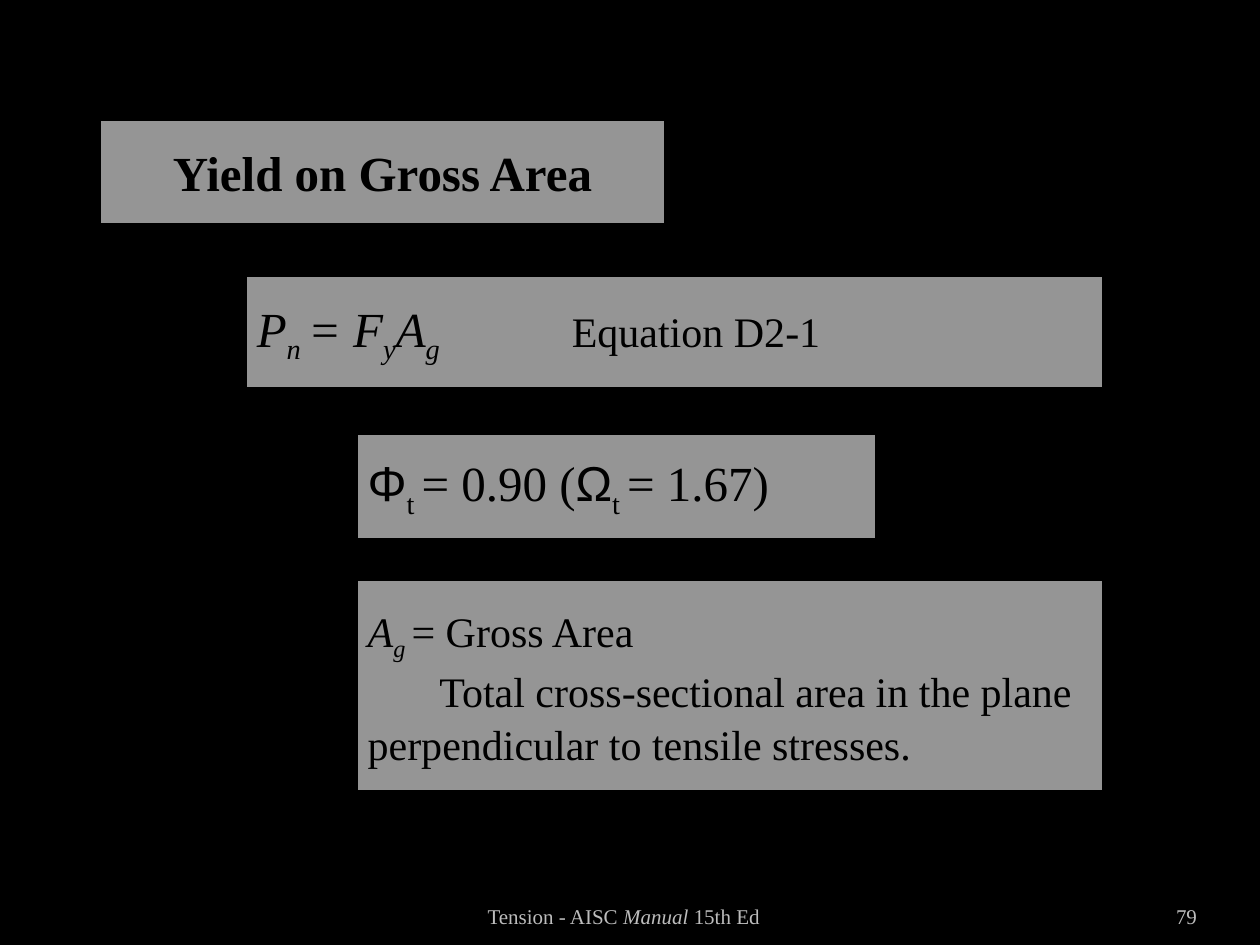
"""Build the slide on yielding of the gross area of a tension member."""
from dataclasses import dataclass
from typing import Optional

from lxml.etree import SubElement
from pptx import Presentation
from pptx.dml.color import RGBColor
from pptx.enum.shapes import MSO_SHAPE
from pptx.enum.text import MSO_ANCHOR as Anchor, PP_ALIGN as Align
from pptx.oxml.ns import qn
from pptx.util import Pt

SERIF, SANS = "Times New Roman", "Arial"
BLACK, PANEL_GREY, FOOTER_GREY = "000000", "F2F2F2", "BCBCBC"


@dataclass
class Piece:
    text: str
    size: float = 28
    italic: bool = False
    bold: bool = False
    subscript: bool = False
    font: str = SERIF


@dataclass
class Box:
    left: float
    top: float
    width: float
    height: float
    lines: list[list[Piece]]
    align: Align = Align.LEFT
    tab: Optional[float] = None
    spacing: Optional[float] = None


def rgb(value: str) -> RGBColor:
    return RGBColor.from_string(value)


def write_lines(text_frame, box: Box, color: str) -> None:
    text_frame.word_wrap = True
    for index, pieces in enumerate(box.lines):
        paragraph = text_frame.add_paragraph() if index else text_frame.paragraphs[0]
        if box.tab is not None:
            properties = paragraph.get_or_add_pPr() if hasattr(paragraph, "get_or_add_pPr") else paragraph._p.get_or_add_pPr()
            tabs = SubElement(properties, qn("a:tabLst"))
            SubElement(tabs, qn("a:tab"), pos=str(Pt(box.tab)), algn="l")
        paragraph.alignment = box.align
        if box.spacing is not None:
            paragraph.line_spacing = box.spacing
        for piece in pieces:
            run = paragraph.add_run()
            run.text = piece.text
            run.font.name = piece.font
            run.font.size = Pt(piece.size)
            run.font.bold = piece.bold
            run.font.italic = piece.italic
            run.font.color.rgb = rgb(color)
            if piece.subscript:
                run.font._element.set("baseline", "-25000")


def add_panel(slide, box: Box) -> None:
    shape = slide.shapes.add_shape(
        MSO_SHAPE.RECTANGLE, Pt(box.left), Pt(box.top), Pt(box.width), Pt(box.height))
    shape.shadow.inherit = False
    shape.fill.solid()
    shape.fill.fore_color.rgb = rgb(PANEL_GREY)
    color = shape._element.spPr.find(qn("a:solidFill")).find(qn("a:srgbClr"))
    SubElement(color, qn("a:alpha"), val="62000")
    shape.line.color.rgb = rgb(BLACK)
    shape.line.width = Pt(3)
    shape.text_frame.vertical_anchor = Anchor.MIDDLE
    write_lines(shape.text_frame, box, BLACK)


def add_footer(slide, box: Box) -> None:
    shape = slide.shapes.add_textbox(
        Pt(box.left), Pt(box.top), Pt(box.width), Pt(box.height))
    text_frame = shape.text_frame
    text_frame.margin_left = text_frame.margin_right = 0
    text_frame.vertical_anchor = Anchor.BOTTOM
    write_lines(text_frame, box, FOOTER_GREY)


def symbol(text: str, size: float = 28) -> Piece:
    return Piece(text, size, italic=True)


def index(text: str, size: float = 28, italic: bool = True) -> Piece:
    return Piece(text, size, italic=italic, subscript=True)


PANELS = [
    Box(139.7, 157, 491.8, 65.5, [[
        symbol("P"), index("n "), symbol("= F"), index("y"), symbol("A"),
        index("g\t\t\t"), Piece("Equation D2-1", 24)]]),
    Box(56.2, 67.7, 324.7, 61.2, [[Piece("Yield on Gross Area", bold=True)]], Align.CENTER),
    Box(203, 247, 298.8, 61.9, [[
        Piece("Φ", font=SANS), index("t ", italic=False), Piece("= 0.90 ("),
        Piece("Ω", font=SANS), index("t ", italic=False), Piece("= 1.67)")]]),
    Box(203, 330.5, 428.4, 122.4, [
        [symbol("A", 24), index("g ", 24), Piece("= Gross Area", 24)],
        [Piece("\tTotal cross-sectional area in the plane "
               "\tperpendicular to tensile stresses.", 24)]], tab=41, spacing=1.05),
]
FOOTERS = [
    Box(624.2, 505.4, 59.8, 28.8, [[Piece("79", 12)]], Align.RIGHT),
    Box(238.3, 505.4, 195.8, 28.8, [[
        Piece("Tension - AISC ", 12), symbol("Manual ", 12), Piece("15th Ed", 12)]],
        Align.RIGHT),
]


def main() -> None:
    presentation = Presentation()
    presentation.slide_width, presentation.slide_height = Pt(720), Pt(540)
    slide = presentation.slides.add_slide(presentation.slide_layouts[6])
    slide.background.fill.solid()
    slide.background.fill.fore_color.rgb = rgb(BLACK)
    for panel in PANELS:
        add_panel(slide, panel)
    for footer in FOOTERS:
        add_footer(slide, footer)
    presentation.save("out.pptx")


if __name__ == "__main__":
    main()
